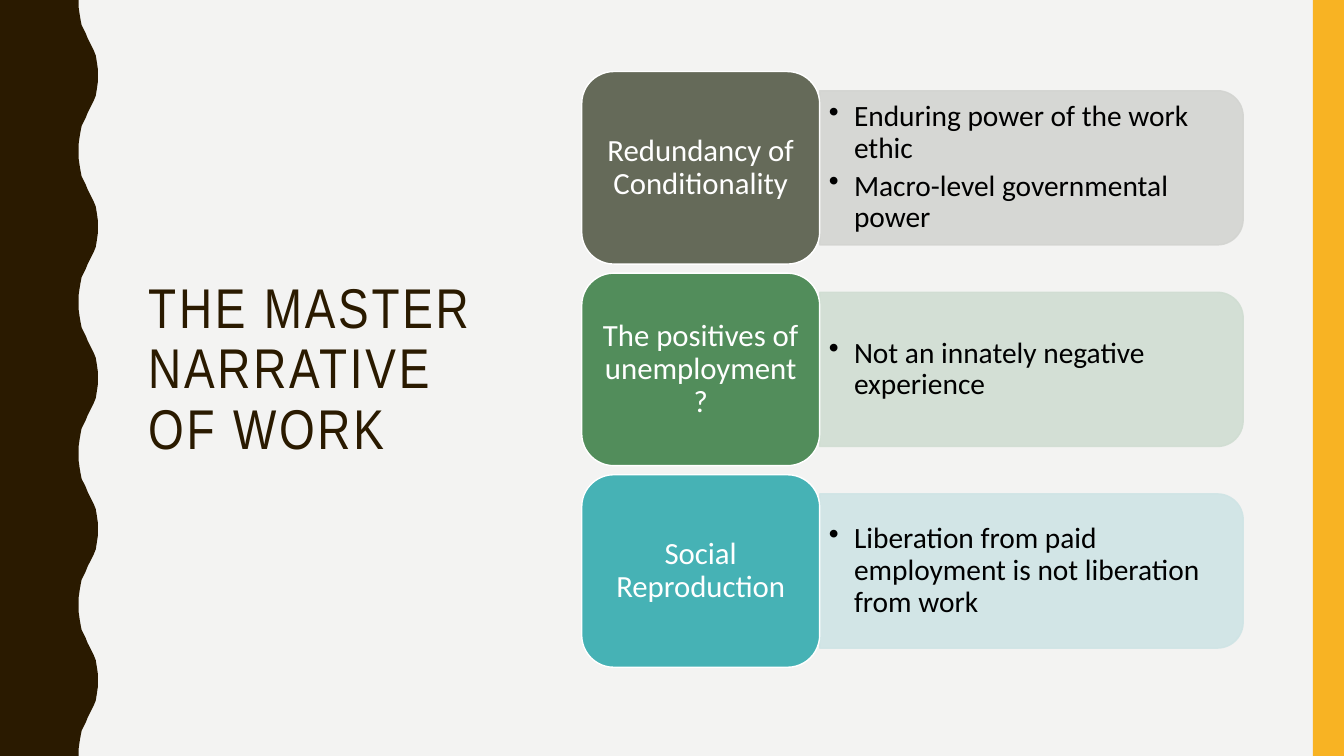
from dataclasses import dataclass

import pptx
import pptx.dml.color
import pptx.enum.shapes
import pptx.enum.text
import pptx.oxml
import pptx.oxml.ns
import pptx.shapes.autoshape
import pptx.slide
import pptx.text.text
import pptx.util

Inches = pptx.util.Inches
Pt = pptx.util.Pt
Shapes = pptx.enum.shapes.MSO_SHAPE
Align = pptx.enum.text.PP_ALIGN

DARK = "2A1A00"
WHITE = "FFFFFF"
HEIGHT = 7.5
FIRST_TOP = 0.71
ROW_PITCH = 2.0
CARD_LEFT, CARD_WIDTH, CARD_HEIGHT = 5.77, 2.36, 1.91
PANEL_LEFT, PANEL_WIDTH, PANEL_HEIGHT = 8.13, 4.2, 1.53
LIST_WIDTH, LIST_HEIGHT = 4.12, 1.38
WAVE_LEFT, WAVE_PERIOD, WAVE_COUNT = 0.78, 1.5, 5
WAVE_RISE = [
    (0, 0), (0, 0.07), (0.01, 0.14), (0.02, 0.2), (0.03, 0.25),
    (0.05, 0.29), (0.07, 0.33), (0.09, 0.38), (0.11, 0.42), (0.13, 0.46),
    (0.15, 0.5), (0.17, 0.55), (0.18, 0.61), (0.19, 0.68), (0.19, 0.75),
]


@dataclass
class Theme:
    heading: str
    points: list[str]
    card_color: str
    panel_color: str


THEMES = [
    Theme("Redundancy of Conditionality",
          ["Enduring power of the work ethic", "Macro-level governmental power"],
          "656A59", "D3D4D1"),
    Theme("The positives of unemployment?",
          ["Not an innately negative experience"],
          "528D5B", "D0DDD2"),
    Theme("Social Reproduction",
          ["Liberation from paid employment is not liberation from work"],
          "46B2B5", "CFE4E5"),
]


def rgb(color: str) -> pptx.dml.color.RGBColor:
    return pptx.dml.color.RGBColor.from_string(color)


def paint(shape: pptx.shapes.autoshape.Shape, fill: str, line: str | None = None) -> None:
    shape.shadow.inherit = False
    shape.fill.solid()
    shape.fill.fore_color.rgb = rgb(fill)
    if line is None:
        shape.line.fill.background()
    else:
        shape.line.color.rgb = rgb(line)
        shape.line.width = Pt(1)


def make_translucent(shape: pptx.shapes.autoshape.Shape, percent: int) -> None:
    for color in shape.element.spPr.iter(pptx.oxml.ns.qn("a:srgbClr")):
        alpha = pptx.oxml.parse_xml(f'<a:alpha {pptx.oxml.ns.nsdecls("a")} val="{percent * 1000}"/>')
        color.append(alpha)


def prepare_frame(frame: pptx.text.text.TextFrame, side: float, vertical: float) -> None:
    frame.word_wrap = True
    frame.auto_size = pptx.enum.text.MSO_AUTO_SIZE.NONE
    frame.vertical_anchor = pptx.enum.text.MSO_ANCHOR.MIDDLE
    frame.margin_left = frame.margin_right = Inches(side)
    frame.margin_top = frame.margin_bottom = Inches(vertical)


def write(paragraph: pptx.text.text._Paragraph, text: str, size: float, color: str,
          font: str = "Calibri", align: Align = Align.LEFT) -> pptx.text.text._Run:
    paragraph.alignment = align
    paragraph.line_spacing = 0.9
    run = paragraph.add_run()
    run.text = text
    run.font.size = Pt(size)
    run.font.name = font
    run.font.color.rgb = rgb(color)
    return run


def add_bullet(paragraph: pptx.text.text._Paragraph) -> None:
    properties = paragraph._p.get_or_add_pPr()
    properties.set("marL", str(Inches(0.25)))
    properties.set("indent", str(-Inches(0.25)))
    properties.append(pptx.oxml.parse_xml(f'<a:buChar {pptx.oxml.ns.nsdecls("a")} char="•"/>'))


def add_wave(slide: pptx.slide.Slide) -> None:
    crest = WAVE_RISE + [(x, WAVE_PERIOD - y) for x, y in reversed(WAVE_RISE[:-1])]
    edge = [(Inches(WAVE_LEFT + x), Inches(WAVE_PERIOD * index + y))
            for index in range(WAVE_COUNT) for x, y in crest]
    builder = slide.shapes.build_freeform(0, 0)
    builder.add_line_segments(edge + [(0, Inches(HEIGHT))], close=True)
    paint(builder.convert_to_shape(), DARK)


def add_title(slide: pptx.slide.Slide) -> None:
    title = slide.shapes.title
    title.left, title.top = Inches(1.37), Inches(0.71)
    title.width, title.height = Inches(3.7), Inches(5.93)
    prepare_frame(title.text_frame, 0.1, 0.05)
    run = write(title.text_frame.paragraphs[0], "THE MASTER NARRATIVE OF WORK", 40, DARK, "Arial Narrow")
    run.font._element.set("spc", "200")


def add_theme(slide: pptx.slide.Slide, theme: Theme, top: float) -> None:
    middle = top + CARD_HEIGHT / 2
    panel = slide.shapes.add_shape(
        Shapes.ROUND_2_SAME_RECTANGLE,
        Inches(PANEL_LEFT + (PANEL_WIDTH - PANEL_HEIGHT) / 2), Inches(middle - PANEL_WIDTH / 2),
        Inches(PANEL_HEIGHT), Inches(PANEL_WIDTH))
    panel.rotation = 90
    paint(panel, theme.panel_color, theme.panel_color)
    make_translucent(panel, 90)

    point_list = slide.shapes.add_textbox(
        Inches(PANEL_LEFT), Inches(middle - LIST_HEIGHT / 2), Inches(LIST_WIDTH), Inches(LIST_HEIGHT))
    frame = point_list.text_frame
    prepare_frame(frame, 0.09, 0.04)
    for index, point in enumerate(theme.points):
        paragraph = frame.add_paragraph() if index else frame.paragraphs[0]
        write(paragraph, point, 21, "000000")
        paragraph.space_after = Pt(4)
        add_bullet(paragraph)

    card = slide.shapes.add_shape(
        Shapes.ROUNDED_RECTANGLE, Inches(CARD_LEFT), Inches(top), Inches(CARD_WIDTH), Inches(CARD_HEIGHT))
    paint(card, theme.card_color, WHITE)
    prepare_frame(card.text_frame, 0.09, 0.05)
    write(card.text_frame.paragraphs[0], theme.heading, 22, WHITE, align=Align.CENTER)


def main() -> None:
    presentation = pptx.Presentation()
    presentation.slide_width = Inches(13.33)
    presentation.slide_height = Inches(HEIGHT)
    slide = presentation.slides.add_slide(presentation.slide_layouts.get_by_name("Title Only"))
    slide.background.fill.solid()
    slide.background.fill.fore_color.rgb = rgb("F3F3F2")
    add_wave(slide)
    stripe = slide.shapes.add_shape(Shapes.RECTANGLE, Inches(13.02), 0, Inches(0.31), Inches(HEIGHT))
    paint(stripe, "F8B323")
    add_title(slide)
    for index, theme in enumerate(THEMES):
        add_theme(slide, theme, FIRST_TOP + index * ROW_PITCH)
    presentation.save("out.pptx")


if __name__ == "__main__":
    main()
